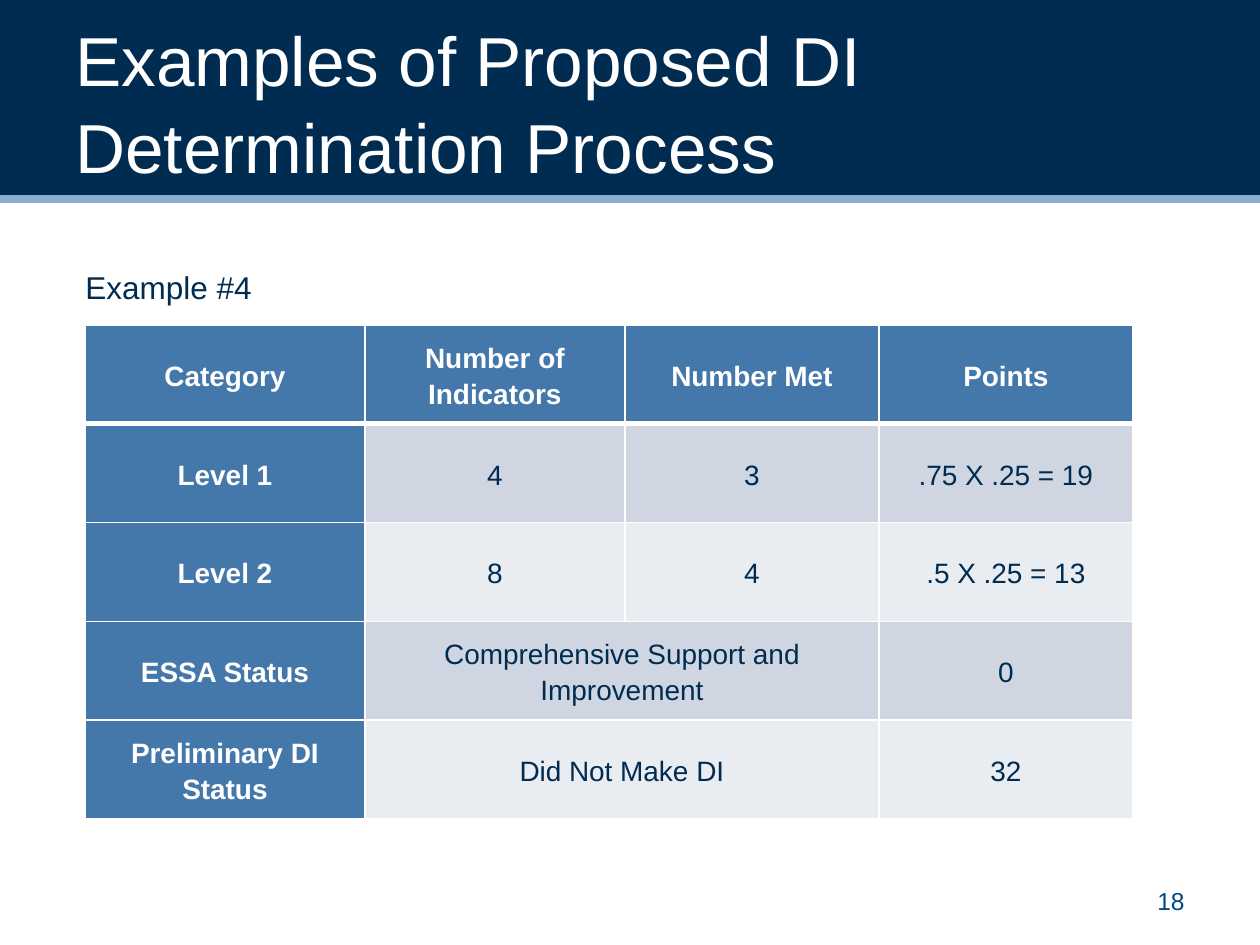
import pptx
import pptx.util
import pptx.dml.color
import pptx.enum.shapes
import pptx.enum.text
import pptx.oxml
import pptx.oxml.ns

PX = 914400 / 126
COLORS = {"navy": "002C51", "rule": "8AADD0", "white": "FFFFFF", "number": "004884",
          "head": "4477AA", "dark_band": "CFD6E2", "light_band": "E9ECF1"}
ALIGN = pptx.enum.text.PP_ALIGN
MIDDLE = pptx.enum.text.MSO_ANCHOR.MIDDLE


def px(n):
    return pptx.util.Emu(round(n * PX))


def rgb(name):
    return pptx.dml.color.RGBColor.from_string(COLORS[name])


class Deck:
    font = "Arial"

    def __init__(self, width, height):
        self.prs = pptx.Presentation()
        self.prs.slide_width, self.prs.slide_height = px(width), px(height)
        self.s = self.prs.slides.add_slide(self.prs.slide_layouts[6])

    def rect(self, x, y, w, h, color):
        sp = self.s.shapes.add_shape(pptx.enum.shapes.MSO_SHAPE.RECTANGLE,
                                     px(x), px(y), px(w), px(h))
        sp.shadow.inherit = False
        sp.fill.solid()
        sp.fill.fore_color.rgb = rgb(color)
        sp.line.fill.background()

    def line(self, x1, y1, x2, y2, color, width):
        cn = self.s.shapes.add_connector(pptx.enum.shapes.MSO_CONNECTOR.STRAIGHT,
                                         px(x1), px(y1), px(x2), px(y2))
        cn.line.color.rgb = rgb(color)
        cn.line.width = pptx.util.Pt(width)
        cn._element.spPr.append(pptx.oxml.parse_xml(
            f"<a:effectLst {pptx.oxml.ns.nsdecls('a')}/>"))

    def add_text(self, tf, text, size, color, align=ALIGN.LEFT, bold=False, spacing=None):
        p = tf.paragraphs[0]
        p.alignment = align
        p.line_spacing = spacing
        r = p.add_run()
        r.text = text
        r.font.name, r.font.size, r.font.bold = self.font, pptx.util.Pt(size), bold
        r.font.color.rgb = rgb(color)

    def text(self, x, y, w, h, text, size, color, anchor=MIDDLE, **style):
        tf = self.s.shapes.add_textbox(px(x), px(y), px(w), px(h)).text_frame
        tf.word_wrap = True
        tf.vertical_anchor = anchor
        self.add_text(tf, text, size, color, **style)

    def borders(self, cell, bottom):
        """Draw white cell edges, 1 pt except for the bottom one."""
        tcPr = cell._tc.get_or_add_tcPr()
        edges = {"lnL": 1, "lnR": 1, "lnT": 1, "lnB": bottom}
        for i, (tag, width) in enumerate(edges.items()):
            tcPr.insert(i, pptx.oxml.parse_xml(
                f'<a:{tag} {pptx.oxml.ns.nsdecls("a")} w="{pptx.util.Pt(width)}">'
                f'<a:solidFill><a:srgbClr val="{COLORS["white"]}"/></a:solidFill></a:{tag}>'))

    def table(self, x, y, widths, h, rows):
        """Build a table with header row and column; None joins a cell to its left one."""
        tbl = self.s.shapes.add_table(len(rows), len(widths), px(x), px(y),
                                      px(sum(widths)), px(h)).table
        for column, w in zip(tbl.columns, widths):
            column.width = px(w)
        for i, row in enumerate(rows):
            for j, text in enumerate(row):
                cell = tbl.cell(i, j)
                head = i == 0 or j == 0
                band = "dark_band" if i % 2 else "light_band"
                cell.fill.solid()
                cell.fill.fore_color.rgb = rgb("head" if head else band)
                self.borders(cell, 3 if i == 0 else 1)
                if text is None:
                    tbl.cell(i, j - 1).merge(cell)
                    continue
                cell.vertical_anchor = MIDDLE
                cell.margin_left = cell.margin_right = px(9)
                cell.margin_top = cell.margin_bottom = 0
                self.add_text(cell.text_frame, text, 16, "white" if head else "navy",
                              ALIGN.CENTER, head, 1.15)


def main():
    deck = Deck(1260, 945)
    deck.rect(0, 0, 1260, 199, "navy")
    deck.line(0, 199, 1260, 199, "rule", 4.5)
    deck.text(63, 21, 1134, 158, "Examples of Proposed DI Determination Process",
              39.6, "white", spacing=1.05)
    deck.text(903, 876, 294, 50, "18", 14, "number", align=ALIGN.RIGHT)
    deck.table(85, 325, [280, 260, 254, 254], 494, [
        ["Category", "Number of Indicators", "Number Met", "Points"],
        ["Level 1", "4", "3", ".75 X .25 = 19"],
        ["Level 2", "8", "4", ".5 X .25 = 13"],
        ["ESSA Status", "Comprehensive Support and Improvement", None, "0"],
        ["Preliminary DI Status", "Did Not Make DI", None, "32"],
    ])
    deck.text(73, 262, 204, 50, "Example #4", 18, "navy",
              anchor=pptx.enum.text.MSO_ANCHOR.TOP)
    deck.prs.save("out.pptx")


if __name__ == "__main__":
    main()
